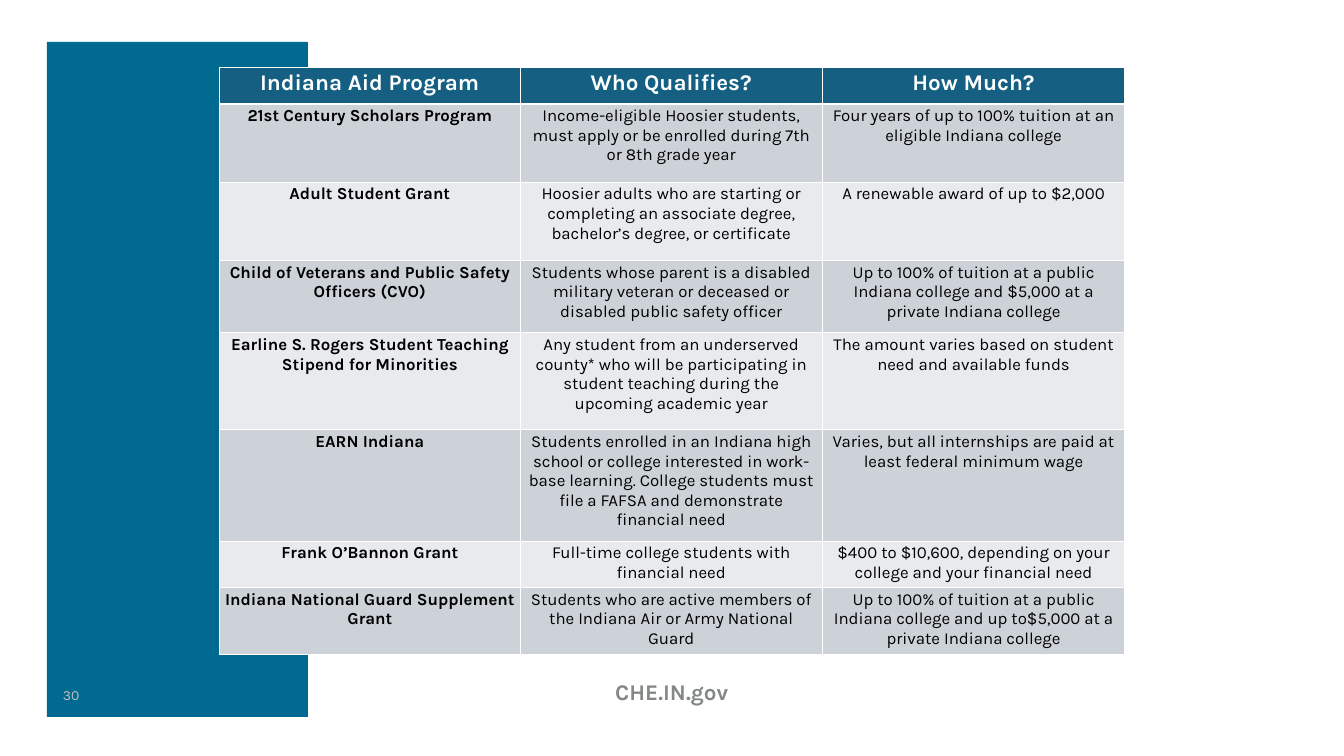
from dataclasses import dataclass
from lxml.etree import SubElement
from pptx import Presentation
from pptx.dml.color import RGBColor
from pptx.enum.shapes import MSO_SHAPE
from pptx.enum.text import PP_ALIGN
from pptx.oxml.ns import qn
from pptx.util import Cm, Pt


@dataclass(frozen=True)
class Theme:
    font: str = "Karla"
    panel: str = "006A90"
    head: str = "156082"
    odd: str = "CCD2D8"
    even: str = "E8EAED"
    white: str = "FFFFFF"
    black: str = "000000"
    pale: str = "BFBFBF"
    gray: str = "838787"
    large: int = 32
    body: int = 24
    small: int = 20


THEME = Theme()
WIDTHS = [15.14, 15.24, 15.24]
HEIGHTS = [1.85, 3.94, 3.94, 3.66, 4.88, 5.61, 2.34, 3.35]
GRANTS = [
    ("Indiana Aid Program", "Who Qualifies?", "How Much?"),
    ("21st Century Scholars Program",
     "Income-eligible Hoosier students, must apply or be enrolled during 7th or 8th grade year",
     "Four years of up to 100% tuition at an eligible Indiana college"),
    ("Adult Student Grant",
     "Hoosier adults who are starting or completing an associate degree, bachelor’s degree, or certificate",
     "A renewable award of up to $2,000"),
    ("Child of Veterans and Public Safety Officers (CVO)",
     "Students whose parent is a disabled military veteran or deceased or disabled public safety officer",
     "Up to 100% of tuition at a public Indiana college and $5,000 at a private Indiana college"),
    ("Earline S. Rogers Student Teaching Stipend for Minorities",
     "Any student from an underserved county* who will be participating in student teaching "
     "during the upcoming academic year",
     "The amount varies based on student need and available funds"),
    ("EARN Indiana",
     "Students enrolled in an Indiana high school or college interested in work-base learning. "
     "College students must file a FAFSA and demonstrate financial need",
     "Varies, but all internships are paid at least federal minimum wage"),
    ("Frank O’Bannon Grant",
     "Full-time college students with financial need",
     "$400 to $10,600, depending on your college and your financial need"),
    ("Indiana National Guard Supplement Grant",
     "Students who are active members of the Indiana Air or Army National Guard",
     "Up to 100% of tuition at a public Indiana college and up to$5,000 at a private Indiana college"),
]


def paint(fill, color):
    fill.solid()
    fill.fore_color.rgb = RGBColor.from_string(color)


def write(frame, text, size, color, bold=False, align=PP_ALIGN.CENTER):
    frame.word_wrap = True
    para = frame.paragraphs[0]
    para.alignment = align
    run = para.add_run()
    style = {"name": THEME.font, "size": Pt(size), "bold": bold}
    for key, value in style.items():
        setattr(run.font, key, value)
    run.font.color.rgb = RGBColor.from_string(color)
    run.text = text


def add_panel(slide, *box):
    panel = slide.shapes.add_shape(MSO_SHAPE.RECTANGLE, *map(Cm, box))
    panel.shadow.inherit = False
    paint(panel.fill, THEME.panel)
    paint(panel.line.fill, THEME.panel)
    panel.line.width = Pt(0.75)


def add_label(slide, box, *text, **style):
    label = slide.shapes.add_textbox(*map(Cm, box))
    write(label.text_frame, *text, **style)


def add_edges(cell, base):
    props = cell._tc.get_or_add_tcPr()
    for side in "LRTB":
        width = base if side == "B" else 1
        edge = SubElement(props, qn(f"a:ln{side}"), w=str(Pt(width)))
        fill = SubElement(edge, qn("a:solidFill"))
        SubElement(fill, qn("a:srgbClr"), val=THEME.white)


def add_grid(slide, left, top):
    size = (len(GRANTS), len(WIDTHS))
    box = (left, top, sum(WIDTHS), sum(HEIGHTS))
    grid = slide.shapes.add_table(*size, *map(Cm, box)).table
    for col, width in zip(grid.columns, WIDTHS):
        col.width = Cm(width)
    for row, height in zip(grid.rows, HEIGHTS):
        row.height = Cm(height)
    for i, grant in enumerate(GRANTS):
        head = i == 0
        back = THEME.head if head else THEME.odd if i % 2 else THEME.even
        size = THEME.large if head else THEME.body
        color = THEME.white if head else THEME.black
        for j, text in enumerate(grant):
            cell = grid.cell(i, j)
            add_edges(cell, 3 if head else 1)
            paint(cell.fill, back)
            write(cell.text_frame, text, size, color, bold=head or j == 0)


def main():
    deck = Presentation()
    for key, value in {"slide_width": 67.74, "slide_height": 38.1}.items():
        setattr(deck, key, Cm(value))
    slide = deck.slides.add_slide(deck.slide_layouts[6])
    add_panel(slide, 2.36, 2.11, 13.11, 34.01)
    add_label(slide, (2.92, 34.47, 3.33, 1.12), "30",
              THEME.small, THEME.pale, align=PP_ALIGN.LEFT)
    add_label(slide, (27.51, 34.06, 12.7, 1.63), "CHE.IN.gov",
              THEME.large, THEME.gray, bold=True)
    add_grid(slide, 11.07, 3.38)
    deck.save("out.pptx")


if __name__ == "__main__":
    main()
